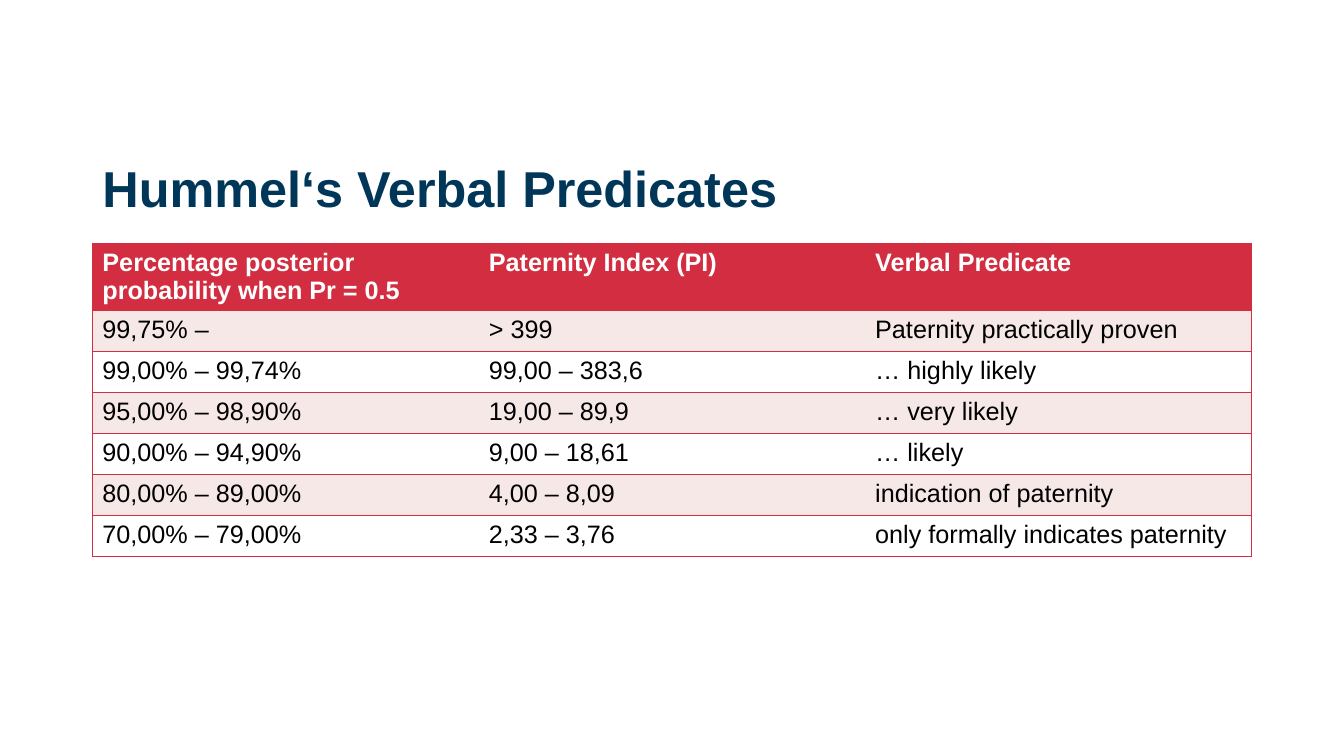
"""Build a slide with the table of Hummel's verbal predicates."""
from dataclasses import dataclass

from lxml.etree import SubElement
from pptx import Presentation
from pptx.dml.color import RGBColor
from pptx.enum.text import MSO_ANCHOR, MSO_AUTO_SIZE, PP_ALIGN
from pptx.oxml.ns import qn
from pptx.util import Pt

PX = 9525


@dataclass(frozen=True)
class Theme:
    font: str = "Arial"
    title_size: int = 36
    table_size: int = 18
    navy: str = "003657"
    red: str = "D22D40"
    pink: str = "F7E8E8"
    white: str = "FFFFFF"
    black: str = "000000"


theme = Theme()


def format_text(paragraph, size, color, bold):
    for run in paragraph.runs:
        run.font.name = theme.font
        run.font.size = Pt(size)
        run.font.bold = bold
        run.font.color.rgb = RGBColor.from_string(color)


def add_border(cell, side, color):
    line = SubElement(cell._tc.get_or_add_tcPr(), qn(f"a:ln{side}"), w=str(Pt(1)))
    if color is None:
        SubElement(line, qn("a:noFill"))
    else:
        fill = SubElement(line, qn("a:solidFill"))
        SubElement(fill, qn("a:srgbClr"), val=color)


presentation = Presentation()
presentation.slide_width = 1280 * PX
presentation.slide_height = 720 * PX
slide = presentation.slides.add_slide(presentation.slide_layouts[5])

title = slide.shapes.title
title.left, title.top, title.width, title.height = 88 * PX, 108 * PX, 1104 * PX, 104 * PX
title_frame = title.text_frame
title_frame.text = "Hummel‘s Verbal Predicates"
title_frame.word_wrap = True
title_frame.auto_size = MSO_AUTO_SIZE.NONE
title_frame.vertical_anchor = MSO_ANCHOR.BOTTOM
title_frame.paragraphs[0].alignment = PP_ALIGN.LEFT
format_text(title_frame.paragraphs[0], theme.title_size, theme.navy, True)

predicates = [
    ("Percentage posterior probability when Pr = 0.5", "Paternity Index (PI)", "Verbal Predicate"),
    ("99,75% –", "> 399", "Paternity practically proven"),
    ("99,00% – 99,74%", "99,00 – 383,6", "… highly likely"),
    ("95,00% – 98,90%", "19,00 – 89,9", "… very likely"),
    ("90,00% – 94,90%", "9,00 – 18,61", "… likely"),
    ("80,00% – 89,00%", "4,00 – 8,09", "indication of paternity"),
    ("70,00% – 79,00%", "2,33 – 3,76", "only formally indicates paternity"),
]
header_height, row_height = 64, 39
last_column = len(predicates[0]) - 1
table_height = header_height + row_height * (len(predicates) - 1)
table = slide.shapes.add_table(
    len(predicates), last_column + 1, 88 * PX, 232 * PX, 1104 * PX, table_height * PX
).table

for row_index, row_texts in enumerate(predicates):
    is_header = row_index == 0
    table.rows[row_index].height = (header_height if is_header else row_height) * PX
    if is_header:
        fill_color, text_color = theme.red, theme.white
    else:
        fill_color = theme.pink if row_index % 2 else theme.white
        text_color = theme.black
    for column_index, text in enumerate(row_texts):
        cell = table.cell(row_index, column_index)
        cell.text_frame.text = text
        format_text(cell.text_frame.paragraphs[0], theme.table_size, text_color, is_header)
        add_border(cell, "L", theme.red if column_index == 0 else None)
        add_border(cell, "R", theme.red if column_index == last_column else None)
        add_border(cell, "T", theme.red)
        add_border(cell, "B", theme.red)
        cell.fill.solid()
        cell.fill.fore_color.rgb = RGBColor.from_string(fill_color)

presentation.save("out.pptx")
